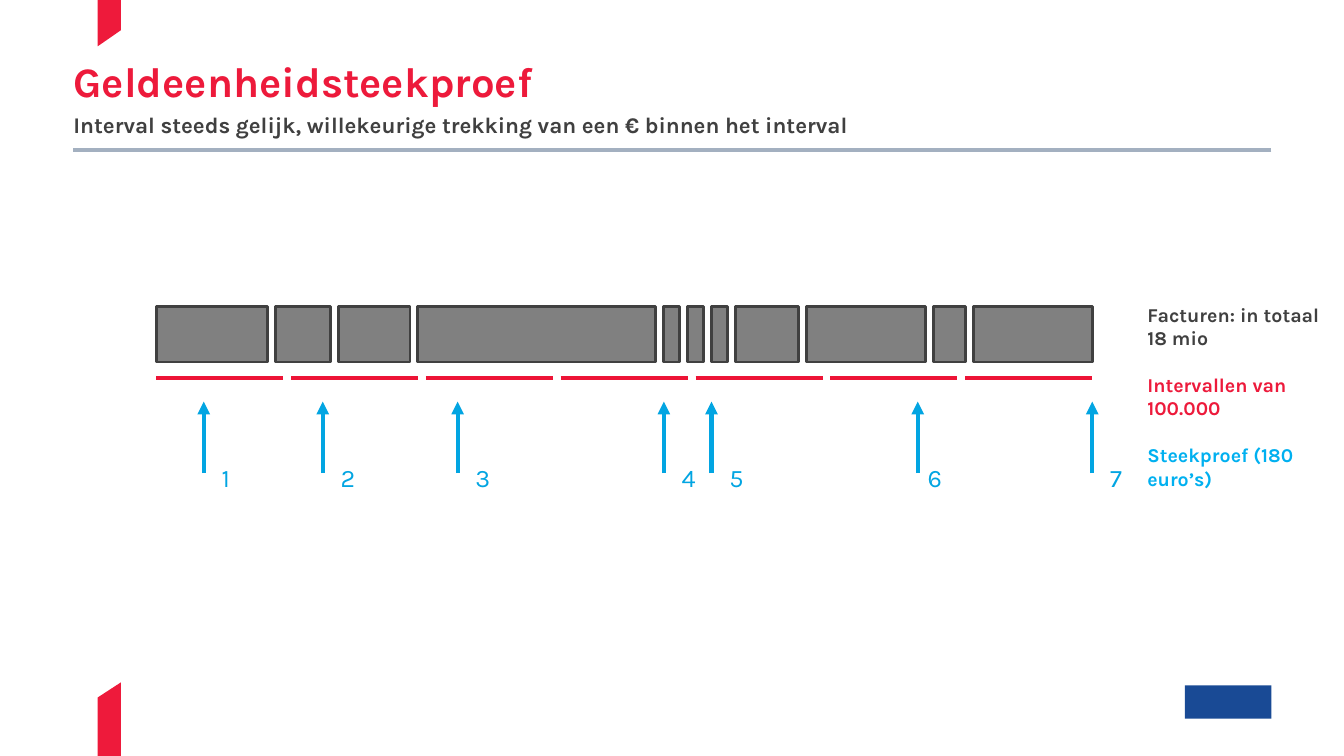
from dataclasses import dataclass

from lxml import etree
from pptx import Presentation
from pptx import util as u
from pptx.dml.color import RGBColor
from pptx.enum import shapes, text
from pptx.oxml.ns import qn

RED = RGBColor(0xED, 0x1A, 0x3B)
RIBBON_RED = RGBColor(0xEE, 0x1A, 0x3B)
INTERVAL_RED = RGBColor(0xED, 0x14, 0x36)
DARK = RGBColor(0x40, 0x40, 0x40)
GREY = RGBColor(0x80, 0x80, 0x80)
RULE_GREY = RGBColor(0xA3, 0xB0, 0xC0)
BLUE = RGBColor(0x02, 0xA5, 0xE2)
LEGEND_BLUE = RGBColor(0x00, 0xB0, 0xF0)
NAVY = RGBColor(0x19, 0x4A, 0x95)

SLIDE_WIDTH, SLIDE_HEIGHT = u.Inches(13.34), u.Inches(7.5)
FONT = "Karla"

# Diagram grid: square cells, counted from the first invoice's top left corner
CELL = u.Mm(2)
GRID_LEFT, GRID_TOP = u.Inches(1.55), u.Inches(3.04)
GAP = 1
INVOICE_COLUMNS = (14, 7, 9, 30, 2, 2, 2, 8, 15, 4, 15)
INVOICE_ROWS = 7
INTERVAL_COUNT, INTERVAL_COLUMNS, INTERVAL_ROW = 7, 16, 9
ARROW_TIP_ROW, ARROW_TAIL_ROW, LABEL_ROW = 12, 21, 19


@dataclass
class Box:
    left: int
    top: int
    width: int
    height: int


@dataclass
class Sample:
    column: int
    label_offset: int = 1


@dataclass
class Entry:
    words: str
    color: RGBColor
    space_before: float = 0


SAMPLES = (Sample(6), Sample(21), Sample(38), Sample(64),
           Sample(70), Sample(96, label_offset=0), Sample(118))
LEGEND = [
    Entry("Facturen: in totaal", DARK),
    Entry("18 mio", DARK),
    Entry("Intervallen van 100.000", RED, 16.5),
    Entry("Steekproef (180 euro’s)", LEGEND_BLUE, 16.5),
]
# Ribbon corners in percent of the slide's width and height
RIBBONS = (
    ((7.27, 0), (9, 0), (9, 4), (7.27, 6.13)),
    ((9, 90.27), (9, 100), (7.27, 100), (7.27, 92.27)),
)


def across(percent: float) -> int:
    return round(SLIDE_WIDTH * percent / 100)


def down(percent: float) -> int:
    return round(SLIDE_HEIGHT * percent / 100)


def share_box(left: float, top: float, width: float, height: float) -> Box:
    return Box(across(left), down(top), across(width), down(height))


def column(number: float) -> int:
    return round(GRID_LEFT + CELL * number)


def row(number: float) -> int:
    return round(GRID_TOP + CELL * number)


def grid_box(left: float, top: float, columns: float, rows: float) -> Box:
    return Box(column(left), row(top), round(CELL * columns), round(CELL * rows))


def add_text(slide, box: Box, entries: list[Entry], *, size: float, bold: bool = False,
             inset: bool = True, anchor=text.MSO_ANCHOR.TOP) -> None:
    shape = slide.shapes.add_textbox(box.left, box.top, box.width, box.height)
    frame = shape.text_frame
    frame.word_wrap = True
    frame.vertical_anchor = anchor
    if not inset:
        frame.margin_left = frame.margin_right = frame.margin_top = frame.margin_bottom = 0
    for index, entry in enumerate(entries):
        paragraph = frame.add_paragraph() if index else frame.paragraphs[0]
        paragraph.space_before = u.Pt(entry.space_before)
        run = paragraph.add_run()
        run.text = entry.words
        run.font.name, run.font.size, run.font.bold = FONT, u.Pt(size), bold
        run.font.color.rgb = entry.color


def paint(shape, fill: RGBColor, outline: RGBColor | None = None) -> None:
    shape.shadow.inherit = False
    shape.fill.solid()
    shape.fill.fore_color.rgb = fill
    if outline is None:
        shape.line.fill.background()
    else:
        shape.line.color.rgb = outline
        shape.line.width = u.Pt(2)


def add_rectangle(slide, box: Box, fill: RGBColor, outline: RGBColor | None = None) -> None:
    shape = slide.shapes.add_shape(
        shapes.MSO_SHAPE.RECTANGLE, box.left, box.top, box.width, box.height)
    paint(shape, fill, outline)


def add_line(slide, start: tuple[int, int], end: tuple[int, int], color: RGBColor,
             arrow: bool = False) -> None:
    connector = slide.shapes.add_connector(shapes.MSO_CONNECTOR.STRAIGHT, *start, *end)
    connector.line.color.rgb = color
    connector.line.width = u.Pt(3)
    properties = connector.element.spPr
    if arrow:
        etree.SubElement(properties.find(qn("a:ln")), qn("a:tailEnd"), type="triangle")
    etree.SubElement(properties, qn("a:effectLst"))


def add_frame(slide) -> None:
    # Ribbons at the top and bottom edges
    for corners in RIBBONS:
        points = [(across(x), down(y)) for x, y in corners]
        builder = slide.shapes.build_freeform(*points[0])
        builder.add_line_segments(points[1:])
        paint(builder.convert_to_shape(), RIBBON_RED)

    # Plain block in the bottom right corner
    add_rectangle(slide, share_box(88.16, 90.67, 6.45, 4.4), NAVY)

    # Heading with rule
    add_line(slide, (across(94.6), down(19.87)), (across(5.47), down(19.87)), RULE_GREY)
    subtitle = "Interval steeds gelijk, willekeurige trekking van een € binnen het interval"
    add_text(slide, share_box(5.47, 14.67, 89.13, 3.6), [Entry(subtitle, DARK)],
             size=16, bold=True, inset=False, anchor=text.MSO_ANCHOR.MIDDLE)
    add_text(slide, share_box(5.47, 6.8, 89.13, 7.73), [Entry("Geldeenheidsteekproef", RED)],
             size=30, bold=True, inset=False, anchor=text.MSO_ANCHOR.MIDDLE)


def add_diagram(slide) -> None:
    # Invoices
    left = 0
    for columns in INVOICE_COLUMNS:
        add_rectangle(slide, grid_box(left, 0, columns, INVOICE_ROWS), GREY, DARK)
        left += columns + GAP

    # Equal intervals
    for index in range(INTERVAL_COUNT):
        left = index * (INTERVAL_COLUMNS + GAP)
        add_line(slide, (column(left), row(INTERVAL_ROW)),
                 (column(left + INTERVAL_COLUMNS), row(INTERVAL_ROW)), INTERVAL_RED)

    # Numbered sample arrows
    for number, sample in enumerate(SAMPLES, start=1):
        x = column(sample.column)
        add_line(slide, (x, row(ARROW_TAIL_ROW)), (x, row(ARROW_TIP_ROW)), BLUE, arrow=True)
        add_text(slide, grid_box(sample.column + sample.label_offset, LABEL_ROW, 5, 5),
                 [Entry(str(number), BLUE)], size=18)

    # Legend
    add_text(slide, grid_box(123.7, -1.1, 29.5, 25.3), LEGEND, size=14, bold=True)


def main() -> None:
    presentation = Presentation()
    presentation.slide_width, presentation.slide_height = SLIDE_WIDTH, SLIDE_HEIGHT
    slide = presentation.slides.add_slide(presentation.slide_layouts[6])
    add_frame(slide)
    add_diagram(slide)
    presentation.save("out.pptx")


if __name__ == "__main__":
    main()
